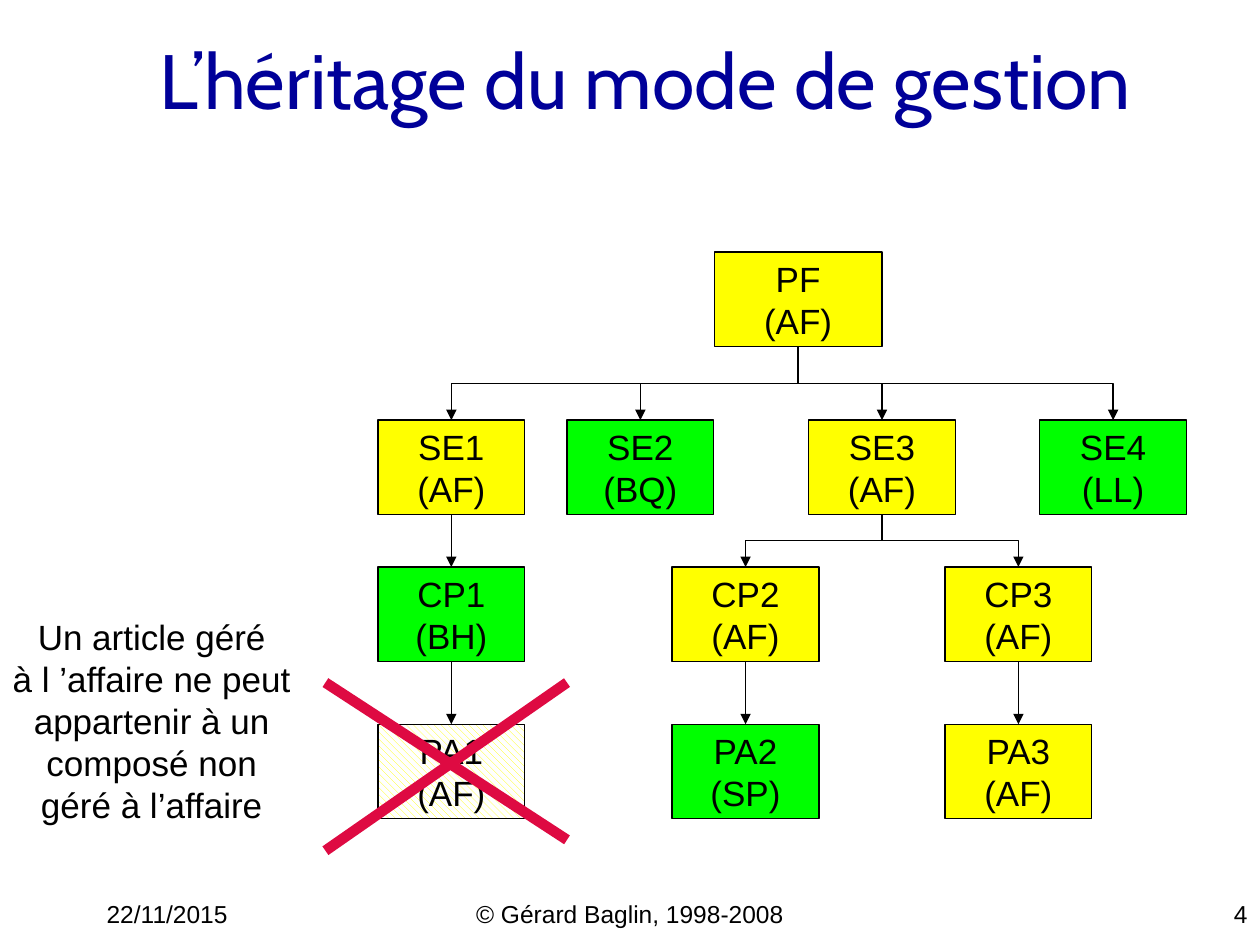
from lxml.etree import SubElement
from pptx import Presentation
from pptx.dml.color import RGBColor
from pptx.enum.dml import MSO_PATTERN
from pptx.enum.shapes import MSO_CONNECTOR, MSO_SHAPE
from pptx.enum.text import MSO_ANCHOR, PP_ALIGN
from pptx.oxml.ns import qn
from pptx.util import Cm, Pt

BLACK = RGBColor(0x00, 0x00, 0x00)
WHITE = RGBColor(0xFF, 0xFF, 0xFF)
NAVY = RGBColor(0x00, 0x00, 0x99)
YELLOW = RGBColor(0xFF, 0xFF, 0x00)
GREEN = RGBColor(0x00, 0xFF, 0x00)
RED = RGBColor(0xDE, 0x0A, 0x42)


def write(tf, text, size, align, font="Arial", color=BLACK):
    tf.text = text
    for p in tf.paragraphs:
        p.alignment = align
        for r in p.runs:
            r.font.name = font
            r.font.size = Pt(size)
            r.font.color.rgb = color


def style_line(c, color, width):
    c.line.color.rgb = color
    c.line.width = Pt(width)
    SubElement(c._element.spPr, qn("a:effectLst"))


prs = Presentation()
prs.slide_width, prs.slide_height = Cm(25.4), Cm(19.05)
s = prs.slides.add_slide(prs.slide_layouts[5])

# Title
title = s.shapes.title
title.left, title.top, title.width, title.height = Cm(0), Cm(0), Cm(23.07), Cm(3.18)
title.text_frame.vertical_anchor = MSO_ANCHOR.MIDDLE
write(title.text_frame, "L’héritage du mode de gestion", 44, PP_ALIGN.RIGHT, "Cabin", NAVY)

# Footer
for text, left, width, align in (
    ("22/11/2015", 1.9, 5.29, PP_ALIGN.LEFT),
    ("© Gérard Baglin, 1998-2008", 8.68, 8.04, PP_ALIGN.CENTER),
    ("4", 20.11, 5.29, PP_ALIGN.RIGHT),
):
    tb = s.shapes.add_textbox(Cm(left), Cm(17.99), Cm(width), Cm(0.64))
    tb.text_frame.word_wrap = True
    write(tb.text_frame, text, 14, align)

# Product structure: name, management mode, centre, level, colour
LEVEL_TOPS = [5.08, 8.47, 11.43, 14.6]
BOX_HEIGHT = 1.9
ITEMS = [
    ("PF", "AF", 16.09, 0, YELLOW),
    ("SE1", "AF", 9.1, 1, YELLOW),
    ("SE2", "BQ", 12.91, 1, GREEN),
    ("SE3", "AF", 17.78, 1, YELLOW),
    ("SE4", "LL", 22.44, 1, GREEN),
    ("CP1", "BH", 9.1, 2, GREEN),
    ("CP2", "AF", 15.03, 2, YELLOW),
    ("CP3", "AF", 20.53, 2, YELLOW),
    ("PA1", "AF", 9.1, 3, YELLOW),
    ("PA2", "SP", 15.03, 3, GREEN),
    ("PA3", "AF", 20.53, 3, YELLOW),
]
boxes = {}
for name, mode, center, level, color in ITEMS:
    width = 3.38 if level == 0 else 2.96
    sp = s.shapes.add_shape(MSO_SHAPE.RECTANGLE, Cm(center - width / 2),
                            Cm(LEVEL_TOPS[level]), Cm(width), Cm(BOX_HEIGHT))
    sp.shadow.inherit = False
    sp.line.color.rgb = BLACK
    sp.line.width = Pt(0.75)
    if name == "PA1":
        sp.fill.patterned()
        sp.fill.pattern = MSO_PATTERN.WIDE_DOWNWARD_DIAGONAL
        sp.fill.fore_color.rgb = color
        sp.fill.back_color.rgb = WHITE
    else:
        sp.fill.solid()
        sp.fill.fore_color.rgb = color
    tf = sp.text_frame
    tf.word_wrap = False
    tf.vertical_anchor = MSO_ANCHOR.MIDDLE
    write(tf, f"{name}\n({mode})", 20, PP_ALIGN.CENTER)
    boxes[name] = sp

# Parent to component arrows
LINKS = [
    ("PF", "SE1"), ("PF", "SE2"), ("PF", "SE3"), ("PF", "SE4"),
    ("SE1", "CP1"), ("SE3", "CP2"), ("SE3", "CP3"),
    ("CP1", "PA1"), ("CP2", "PA2"), ("CP3", "PA3"),
]
for parent, child in LINKS:
    a, b = boxes[parent], boxes[child]
    x1, y1 = a.left + a.width // 2, a.top + a.height
    x2, y2 = b.left + b.width // 2, b.top
    straight = abs(x2 - x1) < Cm(0.01)
    kind = MSO_CONNECTOR.STRAIGHT if straight else MSO_CONNECTOR.ELBOW
    c = s.shapes.add_connector(kind, x1, y1, x2, y2)
    c.begin_connect(a, 2)
    c.end_connect(b, 0)
    if not straight:
        # Turn the elbow so that it leaves downwards
        c.width, c.height = y2 - y1, abs(x2 - x1)
        c.left = (x1 + x2 - c.width) // 2
        c.top = (y1 + y2 - c.height) // 2
        c.rotation = 90 if x2 < x1 else 270
        c._element.spPr.xfrm.flipH = x2 > x1
    style_line(c, BLACK, 0.75)
    SubElement(c.line._get_or_add_ln(), qn("a:tailEnd"), type="triangle")

# Cross over the forbidden component
for y1, y2 in ((13.76, 16.93), (17.15, 13.76)):
    c = s.shapes.add_connector(MSO_CONNECTOR.STRAIGHT, Cm(6.56), Cm(y1), Cm(11.43), Cm(y2))
    style_line(c, RED, 6)

# Rule
tb = s.shapes.add_textbox(Cm(0), Cm(12.27), Cm(6.12), Cm(4.5))
tf = tb.text_frame
tf.word_wrap = False
tf.vertical_anchor = MSO_ANCHOR.MIDDLE
write(tf, "Un article géré\nà l ’affaire ne peut\nappartenir à un\ncomposé non\ngéré à l’affaire",
      20, PP_ALIGN.CENTER)

prs.save("out.pptx")
